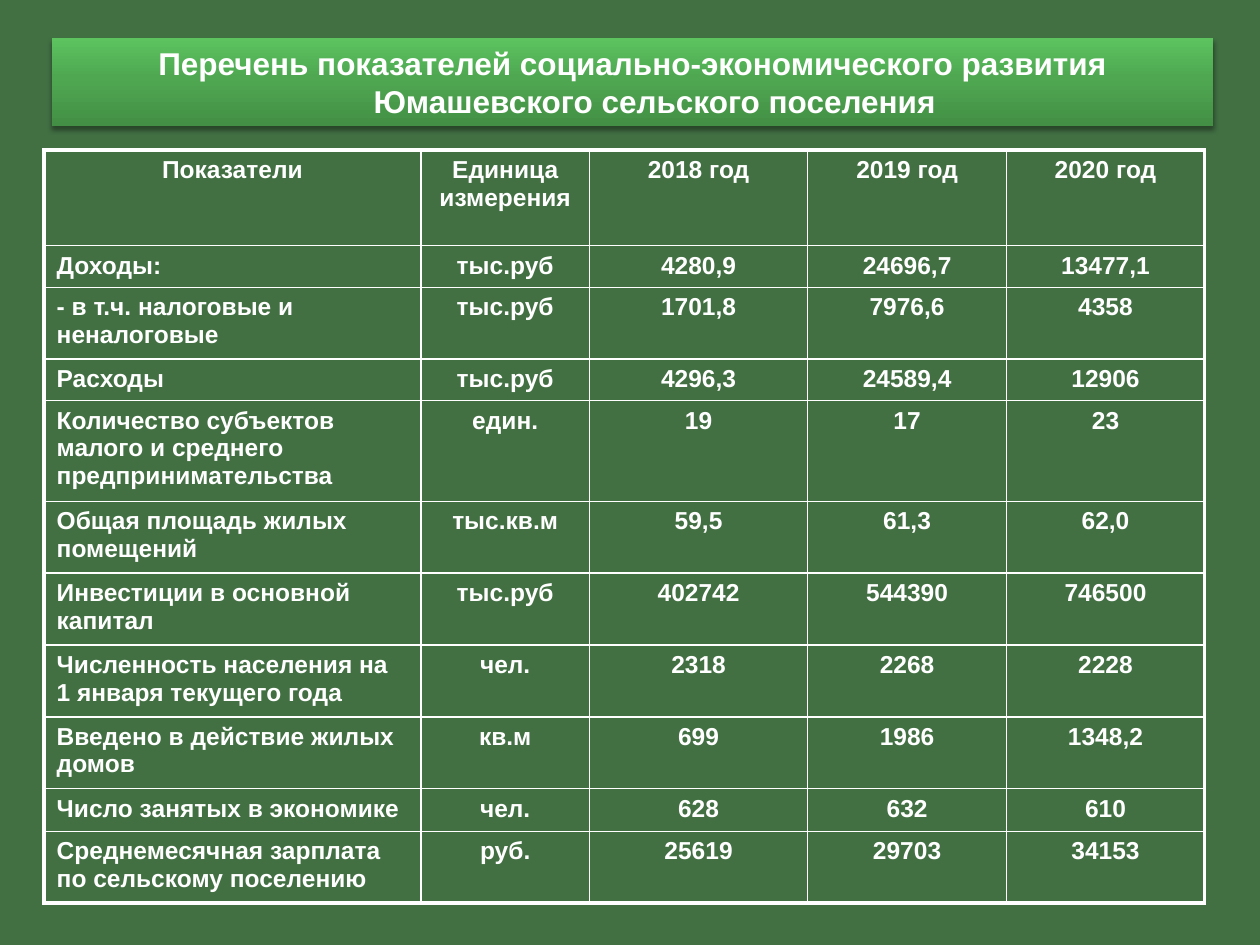
from pptx import Presentation
from pptx.dml.color import RGBColor
from pptx.enum.shapes import MSO_SHAPE as Shape
from pptx.enum.text import MSO_ANCHOR as Anchor, PP_ALIGN as Align
from pptx.oxml import parse_xml
from pptx.oxml.ns import nsdecls
from pptx.util import Inches, Pt

WHITE = RGBColor(0xFF, 0xFF, 0xFF)
BLACK = RGBColor(0x00, 0x00, 0x00)
MOSS = RGBColor(0x42, 0x70, 0x43)
GREEN_DARK = RGBColor(0x43, 0x8F, 0x45)
GREEN_MID = RGBColor(0x4F, 0xA8, 0x51)
GREEN_LIGHT = RGBColor(0x5C, 0xC3, 0x5F)

TITLE = "Перечень показателей социально-экономического развития Юмашевского сельского поселения"
COLUMNS = [2.99, 1.34, 1.73, 1.58, 1.57]
ROWS = [
    (0.76, "Показатели", "Единица измерения", "2018 год", "2019 год", "2020 год"),
    (0.33, "Доходы:", "тыс.руб", "4280,9", "24696,7", "13477,1"),
    (0.57, "- в т.ч. налоговые и неналоговые", "тыс.руб", "1701,8", "7976,6", "4358"),
    (0.33, "Расходы", "тыс.руб", "4296,3", "24589,4", "12906"),
    (0.8, "Количество субъектов малого и среднего предпринимательства", "един.", "19", "17", "23"),
    (0.57, "Общая площадь жилых помещений", "тыс.кв.м", "59,5", "61,3", "62,0"),
    (0.57, "Инвестиции в основной капитал", "тыс.руб", "402742", "544390", "746500"),
    (0.57, "Численность населения на 1 января текущего года", "чел.", "2318", "2268", "2228"),
    (0.57, "Введено в действие жилых домов", "кв.м", "699", "1986", "1348,2"),
    (0.34, "Число занятых в экономике", "чел.", "628", "632", "610"),
    (0.57, "Среднемесячная зарплата по сельскому поселению", "руб.", "25619", "29703", "34153"),
]


class SlideBuilder:
    """Holds the text style and the current page and adds elements to it."""

    def __init__(self, page):
        self.page = page
        self.style = {"name": "Arial", "bold": True}

    def background(self, color):
        fill = self.page.background.fill
        fill.solid()
        fill.fore_color.rgb = color

    def text(self, frame, words, size, align):
        frame.word_wrap = True
        para = frame.paragraphs[0]
        para.alignment = align
        span = para.add_run()
        span.text = words
        for key, value in {**self.style, "size": Pt(size)}.items():
            setattr(span.font, key, value)
        span.font.color.rgb = WHITE
        return para

    def border(self, cell, side, width):
        cell._tc.get_or_add_tcPr().append(parse_xml(
            f'<a:ln{side} {nsdecls("a")} w="{Pt(width)}"><a:solidFill>'
            f'<a:srgbClr val="{WHITE}"/></a:solidFill></a:ln{side}>'))

    def table(self, left, top, columns, rows):
        height = sum(row[0] for row in rows)
        table = self.page.shapes.add_table(
            len(rows), len(columns), Inches(left), Inches(top),
            Inches(sum(columns)), Inches(height)).table
        table.first_row = table.horz_banding = False
        for column, width in zip(table.columns, columns):
            column.width = Inches(width)
        last_row, last_column = len(rows) - 1, len(columns) - 1
        for r, (row_height, *words) in enumerate(rows):
            table.rows[r].height = Inches(row_height)
            for c, word in enumerate(words):
                cell = table.cell(r, c)
                align = Align.LEFT if c == 0 and r > 0 else Align.CENTER
                self.text(cell.text_frame, word, 14, align)
                outer = {"L": c == 0, "R": c == last_column, "T": r == 0, "B": r == last_row}
                for side, is_outer in outer.items():
                    self.border(cell, side, 2.25 if is_outer else 1)
                cell.fill.background()

    def banner(self, left, top, width, height, words, stops):
        box = self.page.shapes.add_shape(
            Shape.RECTANGLE, Inches(left), Inches(top), Inches(width), Inches(height))
        box.line.fill.background()
        box.fill.background()
        properties = box._element.spPr
        colors = "".join(f'<a:gs pos="{place * 1000}"><a:srgbClr val="{color}"/></a:gs>'
                         for place, color in stops)
        gradient = parse_xml(f'<a:gradFill {nsdecls("a")} rotWithShape="1"><a:gsLst>{colors}'
                             '</a:gsLst><a:lin ang="16200000" scaled="0"/></a:gradFill>')
        properties.replace(properties.find("{*}noFill"), gradient)
        properties.append(parse_xml(
            f'<a:effectLst {nsdecls("a")}><a:outerShdw blurRad="{Pt(3.1)}" dist="{Pt(2)}" '
            f'dir="5400000" rotWithShape="0"><a:srgbClr val="{BLACK}"><a:alpha val="38000"/>'
            '</a:srgbClr></a:outerShdw></a:effectLst>'))
        box.text_frame.vertical_anchor = Anchor.MIDDLE
        para = self.text(box.text_frame, words, 18, Align.CENTER)
        indents = para._p.get_or_add_pPr()
        indents.set("marL", str(Inches(0.35)))
        indents.set("indent", str(Inches(-0.35)))


def main():
    deck = Presentation()
    deck.slide_width, deck.slide_height = Inches(10), Inches(7.5)
    builder = SlideBuilder(deck.slides.add_slide(deck.slide_layouts[6]))
    builder.background(MOSS)
    builder.table(0.35, 1.19, COLUMNS, ROWS)
    builder.banner(0.41, 0.3, 9.22, 0.7, TITLE,
                   [(0, GREEN_DARK), (55, GREEN_MID), (100, GREEN_LIGHT)])
    deck.save("out.pptx")


if __name__ == "__main__":
    main()
